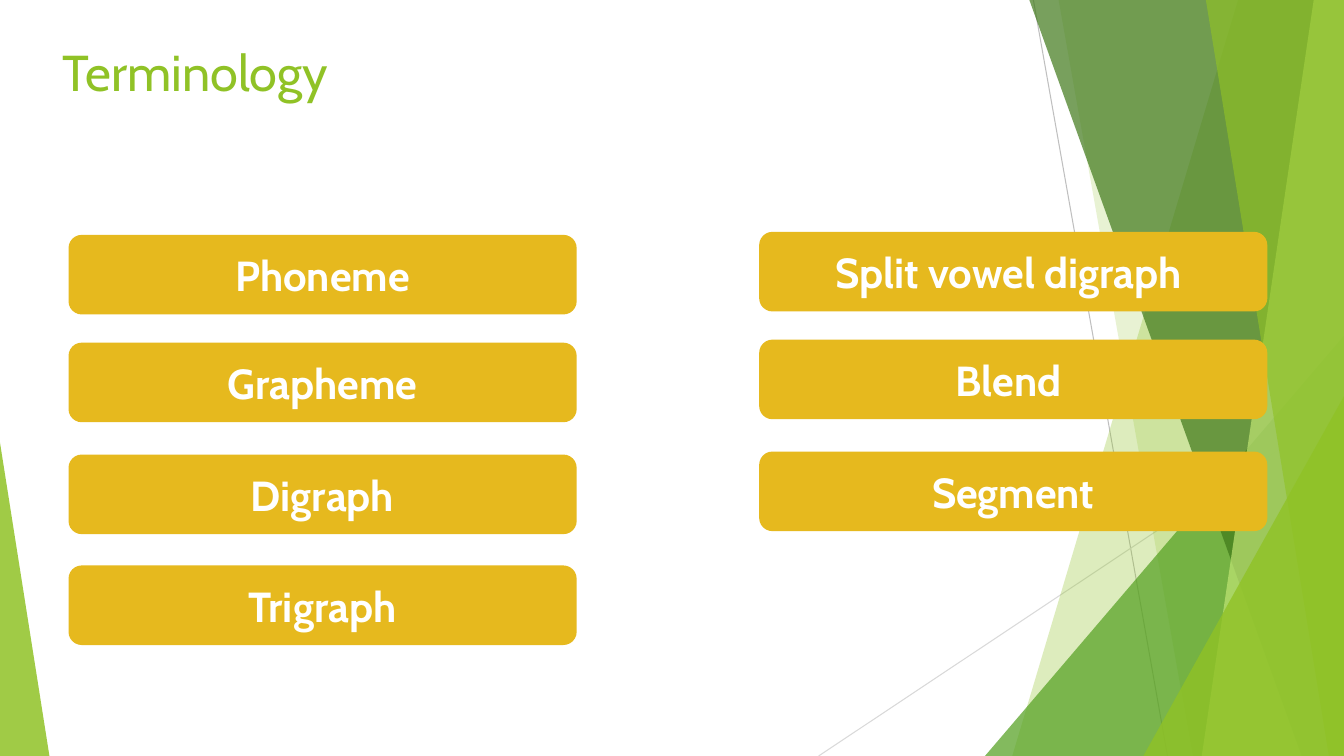
"""Build the Terminology slide: a title, two columns of terms and green facets."""
from dataclasses import dataclass

import lxml.etree
import pptx
import pptx.dml.color
import pptx.enum.shapes
import pptx.enum.text
import pptx.oxml.ns
import pptx.shapes.autoshape
import pptx.slide
import pptx.text.text
import pptx.util

WIDTH = pptx.util.Inches(13.33)
HEIGHT = pptx.util.Inches(7.5)
FONT = "Cabin"
GREEN, GOLD, WHITE = "90C226", "E6B91E", "FFFFFF"
TERM_WIDTH, TERM_HEIGHT = 37.81, 10.53
ROW_TOPS = (31.07, 45.33, 60.13, 74.8)


@dataclass(frozen=True)
class Ray:
    """A thin line, with its ends in percent of the slide."""
    start: tuple[float, float]
    end: tuple[float, float]
    color: str


@dataclass(frozen=True)
class Band:
    """A slanted band reaching the right edge, given by its left corners."""
    top: float
    bottom: float
    color: str
    opacity: int


@dataclass(frozen=True)
class Wedge:
    """A right triangle standing on the bottom edge."""
    left: float
    top: float
    width: float
    apex: float
    color: str
    opacity: int


@dataclass(frozen=True)
class TermColumn:
    """A column of terms with its left edge and vertical shift."""
    left: float
    shift: float
    terms: tuple[str, ...]


RAYS = (
    Ray((76.89, 0), (86.87, 100), "BFBFBF"),
    Ray((100, 53.73), (60.91, 100), "D9D9D9"),
)
FACETS = (
    Band(92.12, 75.32, GREEN, 30),
    Band(78.77, 88.75, GREEN, 20),
    Wedge(73.29, 44.4, 26.71, 1, "54A021", 72),
    Band(76.59, 96.85, "3F7819", 70),
    Band(97.75, 89.42, "C0E474", 70),
    Band(89.72, 98.87, GREEN, 65),
    Wedge(85.07, 52.4, 14.93, 1, GREEN, 80),
    Wedge(0, 58.53, 3.68, 0, GREEN, 85),
)
COLUMNS = (
    TermColumn(5.1, 0, ("Phoneme", "Grapheme", "Digraph", "Trigraph")),
    TermColumn(56.49, -0.4, ("Split vowel digraph ", "Blend ", "Segment")),
)


def across(share: float) -> int:
    """Turn a percentage of the slide's width into a length."""
    return round(WIDTH * share / 100)


def down(share: float) -> int:
    """Turn a percentage of the slide's height into a length."""
    return round(HEIGHT * share / 100)


def rgb(color: str) -> pptx.dml.color.RGBColor:
    """Turn a hex string into a colour."""
    return pptx.dml.color.RGBColor.from_string(color)


def paint(shape: pptx.shapes.autoshape.Shape, color: str, opacity: int = 100) -> None:
    """Give a shape a flat fill without line or shadow."""
    shape.shadow.inherit = False
    shape.line.fill.background()
    shape.fill.solid()
    shape.fill.fore_color.rgb = rgb(color)
    if opacity < 100:
        tint = next(shape._element.spPr.iter(pptx.oxml.ns.qn("a:srgbClr")))
        alpha = lxml.etree.SubElement(tint, pptx.oxml.ns.qn("a:alpha"))
        alpha.set("val", str(opacity * 1000))


def write(frame: pptx.text.text.TextFrame, text: str, *, size: float, color: str,
          bold: bool = False,
          align: pptx.enum.text.PP_ALIGN = pptx.enum.text.PP_ALIGN.LEFT,
          anchor: pptx.enum.text.MSO_ANCHOR = pptx.enum.text.MSO_ANCHOR.TOP) -> None:
    """Write one formatted paragraph into a text frame."""
    frame.word_wrap = True
    frame.auto_size = pptx.enum.text.MSO_AUTO_SIZE.NONE
    frame.vertical_anchor = anchor
    para = frame.paragraphs[0]
    para.alignment = align
    span = para.add_run()
    span.text = text
    span.font.name = FONT
    span.font.size = pptx.util.Pt(size)
    span.font.bold = bold
    span.font.color.rgb = rgb(color)


def draw_ray(page: pptx.slide.Slide, ray: Ray) -> None:
    """Draw a thin background line."""
    line = page.shapes.add_connector(
        pptx.enum.shapes.MSO_CONNECTOR.STRAIGHT,
        across(ray.start[0]), down(ray.start[1]), across(ray.end[0]), down(ray.end[1]))
    line.line.color.rgb = rgb(ray.color)
    line.line.width = pptx.util.Pt(0.75)
    lxml.etree.SubElement(line._element.spPr, pptx.oxml.ns.qn("a:effectLst"))


def draw_band(page: pptx.slide.Slide, band: Band) -> None:
    """Draw a translucent band of full slide height."""
    outline = page.shapes.build_freeform(across(band.top), 0)
    outline.add_line_segments(
        [(WIDTH, 0), (WIDTH, HEIGHT), (across(band.bottom), HEIGHT)], close=True)
    paint(outline.convert_to_shape(), band.color, band.opacity)


def draw_wedge(page: pptx.slide.Slide, wedge: Wedge) -> None:
    """Draw a translucent triangle."""
    shape = page.shapes.add_shape(
        pptx.enum.shapes.MSO_SHAPE.ISOSCELES_TRIANGLE, across(wedge.left),
        down(wedge.top), across(wedge.width), down(100 - wedge.top))
    shape.adjustments[0] = wedge.apex
    paint(shape, wedge.color, wedge.opacity)


def draw_terms(page: pptx.slide.Slide, column: TermColumn) -> None:
    """Draw a column of rounded boxes, one for each term."""
    for term, top in zip(column.terms, ROW_TOPS):
        box = page.shapes.add_shape(
            pptx.enum.shapes.MSO_SHAPE.ROUNDED_RECTANGLE, across(column.left),
            down(top + column.shift), across(TERM_WIDTH), down(TERM_HEIGHT))
        paint(box, GOLD)
        write(box.text_frame, term, size=30, color=WHITE, bold=True,
              align=pptx.enum.text.PP_ALIGN.CENTER,
              anchor=pptx.enum.text.MSO_ANCHOR.MIDDLE)


def main() -> None:
    """Build the deck and save it."""
    deck = pptx.Presentation()
    deck.slide_width, deck.slide_height = WIDTH, HEIGHT
    page = deck.slides.add_slide(deck.slide_layouts.get_by_name("Title Only"))
    for ray in RAYS:
        draw_ray(page, ray)
    for facet in FACETS:
        if isinstance(facet, Band):
            draw_band(page, facet)
        else:
            draw_wedge(page, facet)
    title = page.shapes.title
    title.left, title.top = across(3.9), down(4.8)
    title.width, title.height = across(80.35), down(16.8)
    write(title.text_frame, "Terminology", size=36, color=GREEN)
    for column in COLUMNS:
        draw_terms(page, column)
    deck.save("out.pptx")


if __name__ == "__main__":
    main()
